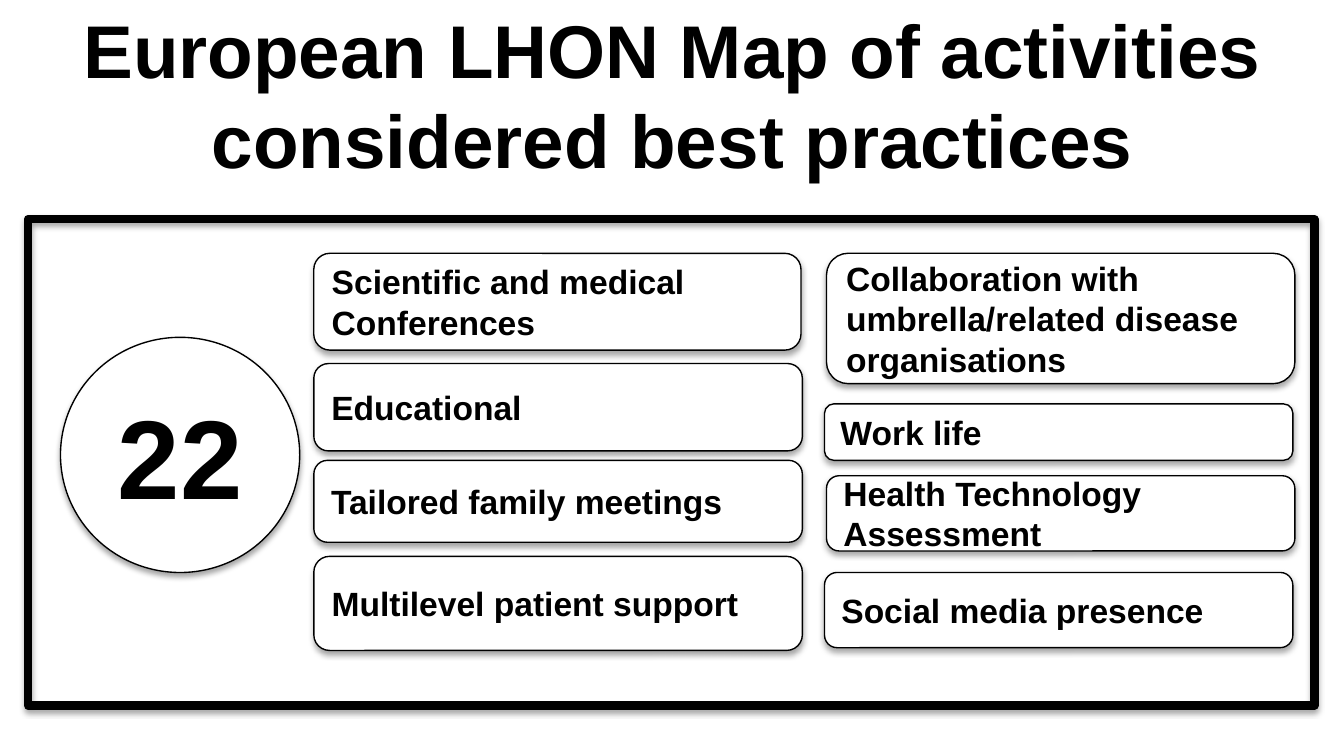
from pptx import Presentation
from pptx import util as u
from pptx.dml.color import RGBColor
from pptx.enum import shapes, text

PX = u.Inches(1) // 200
BLACK = "000000"
WHITE = "FFFFFF"
LEFT_ACTIVITIES = [
    (0, 51, 725, 144, ["Scientific and medical Conferences"]),
    (0, 215, 727, 130, ["Educational"]),
    (0, 359, 727, 122, ["Tailored family meetings"]),
    (0, 502, 727, 140, ["Multilevel patient support"]),
]
RIGHT_ACTIVITIES = [
    (3, 51, 697, 194, ["Collaboration with umbrella/related disease organisations"]),
    (0, 275, 697, 84, ["Work life"]),
    (3, 382, 697, 112, ["Health Technology", "Assessment"]),
    (0, 526, 697, 112, ["Social media presence"]),
]


def color(value):
    return RGBColor.from_string(value)


def px(*lengths):
    return [u.Emu(length * PX) for length in lengths]


def write(shape, lines, size, alignment):
    frame = shape.text_frame
    frame.word_wrap = True
    frame.vertical_anchor = text.MSO_ANCHOR.MIDDLE
    frame.text = "\n".join(lines)
    for paragraph in frame.paragraphs:
        paragraph.alignment = alignment
        paragraph.font.name = "Arial"
        paragraph.font.size = u.Pt(size)
        paragraph.font.bold = True
        paragraph.font.color.rgb = color(BLACK)


def add_outlined(slide, kind, box, line_width=0.75, fill=WHITE):
    shape = slide.shapes.add_shape(kind, *px(*box))
    if fill:
        shape.fill.solid()
        shape.fill.fore_color.rgb = color(fill)
    else:
        shape.fill.background()
    shape.line.color.rgb = color(BLACK)
    shape.line.width = u.Pt(line_width)
    return shape


def add_title(slide, left, top, width, height):
    title = slide.shapes.add_textbox(*px(left, top, width, height))
    write(title, ["European LHON Map of activities considered best practices"],
          40, text.PP_ALIGN.CENTER)


def add_count(slide, left, top, width, height):
    circle = add_outlined(slide, shapes.MSO_SHAPE.OVAL, (left, top, width, height))
    write(circle, ["22"], 60, text.PP_ALIGN.CENTER)


def add_activities(slide, left, top, activities):
    for x, y, width, height, lines in activities:
        card = add_outlined(slide, shapes.MSO_SHAPE.ROUNDED_RECTANGLE,
                            (left + x, top + y, width, height))
        write(card, lines, 18, text.PP_ALIGN.LEFT)


def add_map(slide, left, top, width, height):
    add_count(slide, left + 48, top + 176, 356, 350)
    add_activities(slide, left + 425, top, LEFT_ACTIVITIES)
    add_activities(slide, left + 1185, top, RIGHT_ACTIVITIES)
    add_outlined(slide, shapes.MSO_SHAPE.RECTANGLE, (left, top, width, height),
                 line_width=4.5, fill=None)


def main():
    presentation = Presentation()
    presentation.slide_width, presentation.slide_height = px(2000, 1125)
    slide = presentation.slides.add_slide(presentation.slide_layouts[6])
    add_title(slide, 100, 45, 1800, 188)
    add_map(slide, 42, 326, 1914, 724)
    presentation.save("out.pptx")


if __name__ == "__main__":
    main()
